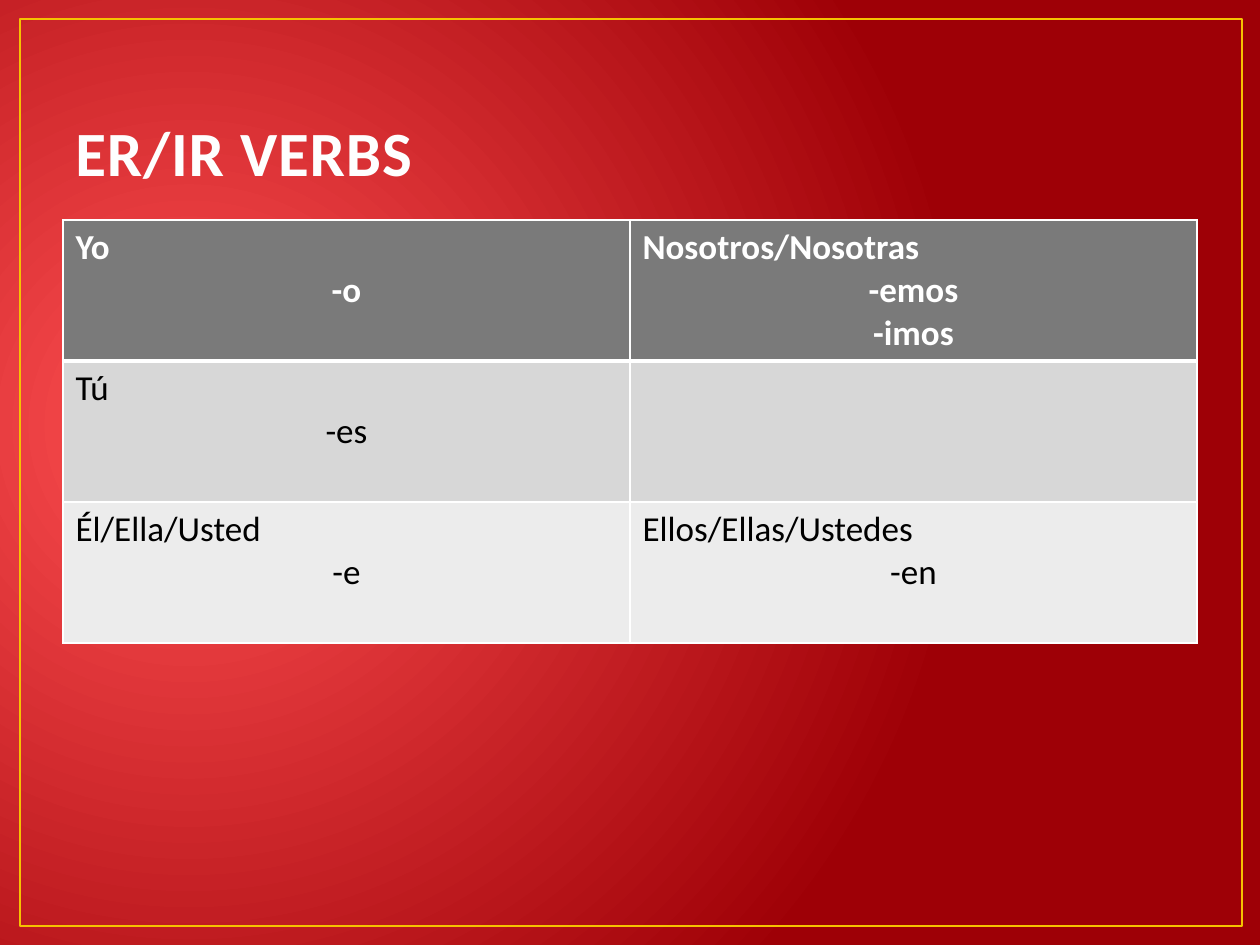
from lxml.etree import SubElement
from pptx import Presentation
from pptx.dml.color import RGBColor
from pptx.enum.shapes import MSO_SHAPE
from pptx.enum.text import MSO_ANCHOR, PP_ALIGN
from pptx.oxml.ns import qn
from pptx.util import Emu, Pt

PX = 914400 // 126
BRIGHT_RED = RGBColor(0xFF, 0x50, 0x52)
DARK_RED = RGBColor(0x9E, 0x00, 0x06)
GOLD = RGBColor(0xF5, 0xC2, 0x01)
OFF_WHITE = RGBColor(0xFE, 0xFE, 0xFE)
WHITE = RGBColor(0xFF, 0xFF, 0xFF)
BLACK = RGBColor(0x00, 0x00, 0x00)
CHARCOAL = RGBColor(0x3D, 0x3D, 0x3D)
ROW_FILLS = [RGBColor(0x7A, 0x7A, 0x7A), RGBColor(0xD7, 0xD7, 0xD7),
             RGBColor(0xEC, 0xEC, 0xEC)]


def write(p, text, size=20, color=BLACK, bold=False, align=PP_ALIGN.LEFT):
    p.alignment = align
    r = p.add_run()
    r.text = text
    r.font.name = "Calibri"
    r.font.size = Pt(size)
    r.font.bold = bold
    r.font.color.rgb = color
    return r


def add_line(parent, tag, color, width):
    """Append a solid line element, such as a cell border or text outline."""
    ln = SubElement(parent, qn(tag), w=str(Pt(width)))
    fill = SubElement(ln, qn("a:solidFill"))
    SubElement(fill, qn("a:srgbClr"), val=str(color))
    return ln


prs = Presentation()
prs.slide_width = Emu(9144000)
prs.slide_height = Emu(6858000)
s = prs.slides.add_slide(prs.slide_layouts[6])

# Radial background
fill = s.background.fill
fill.gradient()
for stop, color in zip(fill.gradient_stops, (BRIGHT_RED, DARK_RED)):
    stop.color.rgb = color
grad = s.element.find(".//" + qn("a:gradFill"))
grad.remove(grad.find(qn("a:lin")))
circle = SubElement(grad, qn("a:path"), path="circle")
SubElement(circle, qn("a:fillToRect"), l="15000", t="50000", r="85000", b="60000")

# Gold frame
frame = s.shapes.add_shape(MSO_SHAPE.RECTANGLE, 20 * PX, 19 * PX, 1222 * PX, 907 * PX)
frame.shadow.inherit = False
frame.fill.background()
frame.line.color.rgb = GOLD
frame.line.width = Pt(1.5)

# Title
title = s.shapes.add_textbox(63 * PX, 38 * PX, 1134 * PX, 157 * PX)
tf = title.text_frame
tf.word_wrap = True
tf.vertical_anchor = MSO_ANCHOR.BOTTOM
r = write(tf.paragraphs[0], "ER/IR VERBS", size=36, color=OFF_WHITE, bold=True)
rPr = r.font._element
rPr.set("spc", "50")
rPr.insert(0, add_line(rPr, "a:ln", CHARCOAL, 1.05))

# Verb endings: pronoun first, then its endings
ENDINGS = [
    [["Yo", "-o"], ["Nosotros/Nosotras", "-emos", "-imos"]],
    [["Tú", "-es"], []],
    [["Él/Ella/Usted", "-e"], ["Ellos/Ellas/Ustedes", "-en"]],
]
table = s.shapes.add_table(3, 2, 63 * PX, 220 * PX, 1134 * PX, 423 * PX).table
for i, row in enumerate(ENDINGS):
    header = i == 0
    for j, lines in enumerate(row):
        cell = table.cell(i, j)
        tf = cell.text_frame
        for k, text in enumerate(lines):
            p = tf.add_paragraph() if k else tf.paragraphs[0]
            write(p, text, color=WHITE if header else BLACK, bold=header,
                  align=PP_ALIGN.CENTER if k else PP_ALIGN.LEFT)
        tcPr = cell._tc.get_or_add_tcPr()
        for side in "LRTB":
            thick = (i, side) in ((0, "B"), (1, "T"))
            add_line(tcPr, f"a:ln{side}", WHITE, 3 if thick else 1)
        cell.fill.solid()
        cell.fill.fore_color.rgb = ROW_FILLS[i]

prs.save("out.pptx")
